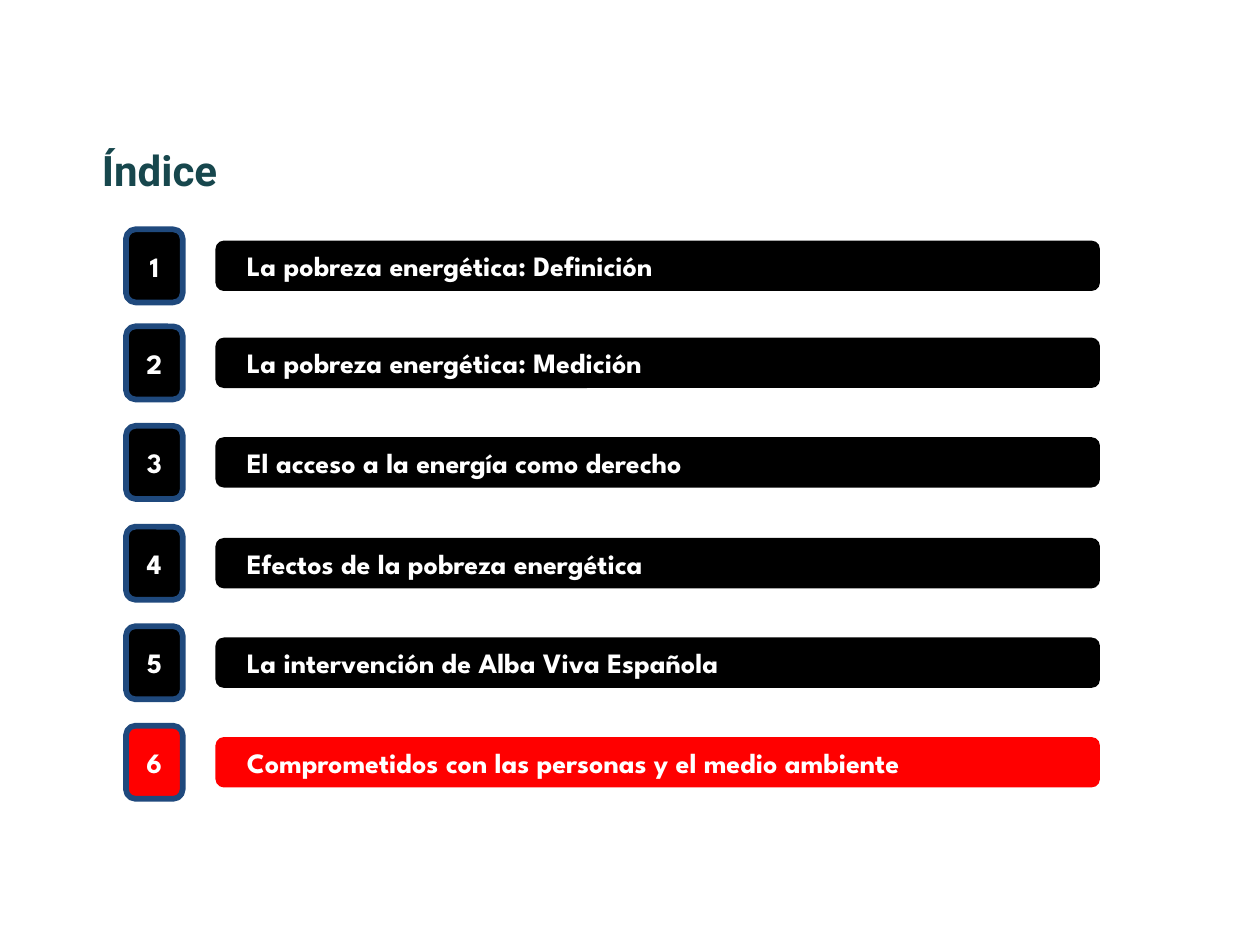
from pptx import Presentation
from pptx import util as u
from pptx.dml.color import RGBColor
from pptx.enum import shapes, text

COLORS = {"title": "17474D", "bar": "000000", "current": "FF0000",
          "border": "1F497D", "label": "FFFFFF"}


def add_run(p, words, font, size, color):
    r = p.add_run()
    r.text = words
    r.font.name = font
    r.font.size = u.Pt(size)
    r.font.bold = True
    r.font.color.rgb = RGBColor.from_string(COLORS[color])


def add_box(s, x, y, w, h, fill, words, align, left=0.1):
    sp = s.shapes.add_shape(shapes.MSO_SHAPE.ROUNDED_RECTANGLE, u.Inches(x),
                            u.Inches(y), u.Inches(w), u.Inches(h))
    sp.shadow.inherit = False
    sp.fill.solid()
    sp.fill.fore_color.rgb = RGBColor.from_string(COLORS[fill])
    sp.line.fill.background()
    tf = sp.text_frame
    tf.word_wrap = True
    tf.vertical_anchor = text.MSO_ANCHOR.MIDDLE
    tf.margin_left = u.Inches(left)
    p = tf.paragraphs[0]
    p.alignment = align
    add_run(p, words, "League Spartan", 16, "label")
    return sp


prs = Presentation()
prs.slide_width, prs.slide_height = u.Inches(10), u.Inches(7.5)
s = prs.slides.add_slide(prs.slide_layouts[6])

# Title
sp = s.shapes.add_textbox(u.Inches(0.55), u.Inches(1.05), u.Inches(8.54), u.Inches(0.63))
tf = sp.text_frame
tf.word_wrap = True
tf.vertical_anchor = text.MSO_ANCHOR.BOTTOM
tf.margin_left, tf.margin_right = u.Inches(0.26), u.Inches(0.18)
tf.margin_top, tf.margin_bottom = u.Inches(0.05), u.Inches(0.13)
add_run(tf.paragraphs[0], "Índice", "Roboto", 24, "title")

# Index entries: top of the number box, heading
entries = [
    (1.82, "La pobreza energética: Definición"),
    (2.59, "La pobreza energética: Medición"),
    (3.38, "El acceso a la energía como derecho"),
    (4.18, "Efectos de la pobreza energética"),
    (4.97, "La intervención de Alba Viva Española"),
    (5.76, "Comprometidos con las personas y el medio ambiente"),
]
current = 6
for number, (top, heading) in enumerate(entries, 1):
    fill = "current" if number == current else "bar"
    sp = add_box(s, 1, top, 0.45, 0.58, fill, str(number), text.PP_ALIGN.CENTER)
    sp.line.color.rgb = RGBColor.from_string(COLORS["border"])
    sp.line.width = u.Pt(3.25)
    add_box(s, 1.71, top + 0.09, 7.02, 0.4, fill, heading, text.PP_ALIGN.LEFT, left=0.23)

prs.save("out.pptx")
